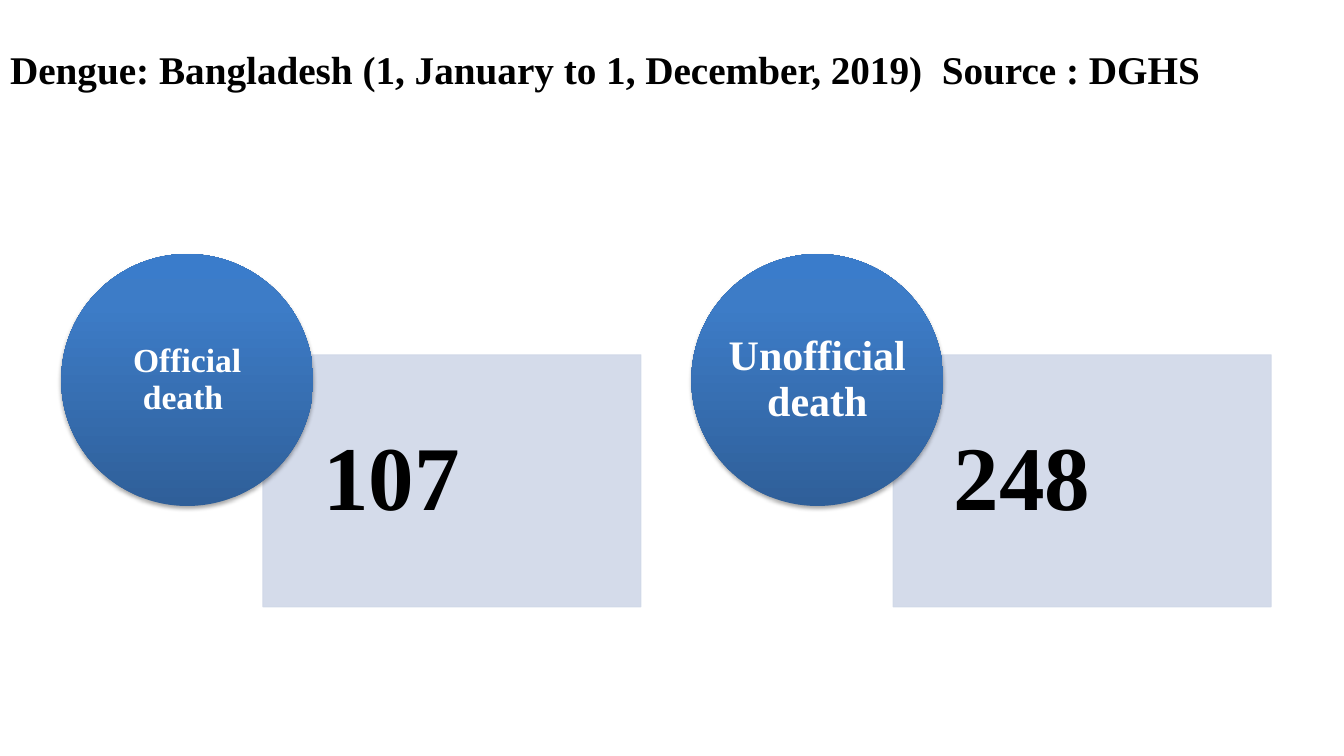
from copy import deepcopy

from pptx import Presentation, util as u
from pptx.dml.color import RGBColor
from pptx.enum import shapes, text
from pptx.oxml import parse_xml
from pptx.oxml.ns import nsdecls, qn

FONT = "Times New Roman"
CELL = 0.25  # inches per grid column and row
DIAMETER = 10
PANEL_WIDTH, PANEL_HEIGHT = 15, 10
PANEL_SHIFT = (8, 4)
FIRST_LEFT, TOP, PITCH = 2.43, 10.08, 25
DEATHS = [("Official death ", 24, "107"), ("Unofficial death", 30, "248")]
BALL_STOPS = [(0, "2F5F99"), (0.8, "3D7CC7"), (1, "3A7CCB")]


def cells(count):
    return u.Inches(count * CELL)


def colour(value):
    return RGBColor.from_string(value)


def write(shape, words, size, ink, align, margins=(0, 0, 0, 0), spacing=0.9):
    """Fill a shape with one bold run; margins are left, top, right, bottom in inches."""
    frame = shape.text_frame
    frame.word_wrap = True
    frame.auto_size = text.MSO_AUTO_SIZE.NONE
    frame.vertical_anchor = text.MSO_ANCHOR.MIDDLE
    (frame.margin_left, frame.margin_top,
     frame.margin_right, frame.margin_bottom) = map(u.Inches, margins)
    para = frame.paragraphs[0]
    para.alignment = align
    para.line_spacing = spacing
    span = para.add_run()
    span.text = words
    span.font.name = FONT
    span.font.size = u.Pt(size)
    span.font.bold = True
    span.font.color.rgb = colour(ink)


def add_shape(page, kind, left, top, width, height):
    shape = page.shapes.add_shape(kind, *map(cells, (left, top, width, height)))
    shape.shadow.inherit = False
    return shape


def make_translucent(shape, percent):
    for tint in shape._element.spPr.iter(qn("a:srgbClr")):
        tint.append(parse_xml(f'<a:alpha {nsdecls("a")} val="{percent * 1000}"/>'))


def shade_ball(ball):
    """Give the ball its three-stop gradient and a soft shadow below."""
    ball.fill.gradient()
    ball.fill.gradient_angle = 90
    stop_list = ball._element.spPr.find(".//" + qn("a:gsLst"))
    stop_list.append(deepcopy(stop_list[0]))
    for stop, (position, tint) in zip(ball.fill.gradient_stops, BALL_STOPS):
        stop.position = position
        stop.color.rgb = colour(tint)
    ball.line.fill.background()
    ball._element.spPr.find(qn("a:effectLst")).append(parse_xml(
        f'<a:outerShdw {nsdecls("a")} blurRad="{u.Pt(3.1)}" dist="{u.Pt(1.8)}" '
        'dir="5400000" rotWithShape="0"><a:srgbClr val="000000">'
        '<a:alpha val="35000"/></a:srgbClr></a:outerShdw>'))


def add_panel(page, left, top, number):
    panel = add_shape(page, shapes.MSO_SHAPE.RECTANGLE, left, top,
                      PANEL_WIDTH, PANEL_HEIGHT)
    panel.fill.solid()
    panel.fill.fore_color.rgb = colour("D0D8E8")
    panel.line.color.rgb = colour("D0D8E8")
    panel.line.width = u.Pt(0.75)
    make_translucent(panel, 90)
    write(panel, number, 65, "000000", text.PP_ALIGN.LEFT, (0.6, 0.51, 0.51, 0.51))


def add_ball(page, left, top, label, size):
    ball = add_shape(page, shapes.MSO_SHAPE.OVAL, left, top, DIAMETER, DIAMETER)
    shade_ball(ball)
    write(ball, label, size, "FFFFFF", text.PP_ALIGN.CENTER)


def set_title(page, words):
    title = page.shapes.title
    title.left, title.top = 0, u.Inches(0.35)
    title.width, title.height = u.Inches(12.07), u.Inches(0.67)
    write(title, words, 28, "000000", text.PP_ALIGN.LEFT,
          (0.1, 0.05, 0.1, 0.05), spacing=1.0)


def main():
    deck = Presentation()
    deck.slide_width, deck.slide_height = u.Inches(13.33), u.Inches(7.5)
    page = deck.slides.add_slide(deck.slide_layouts.get_by_name("Title Only"))
    set_title(page, "Dengue: Bangladesh (1, January to 1, December, 2019)  Source : DGHS")
    for column, (label, size, number) in enumerate(DEATHS):
        left = FIRST_LEFT + column * PITCH
        add_panel(page, left + PANEL_SHIFT[0], TOP + PANEL_SHIFT[1], number)
        add_ball(page, left, TOP, label, size)
    deck.save("out.pptx")


if __name__ == "__main__":
    main()
